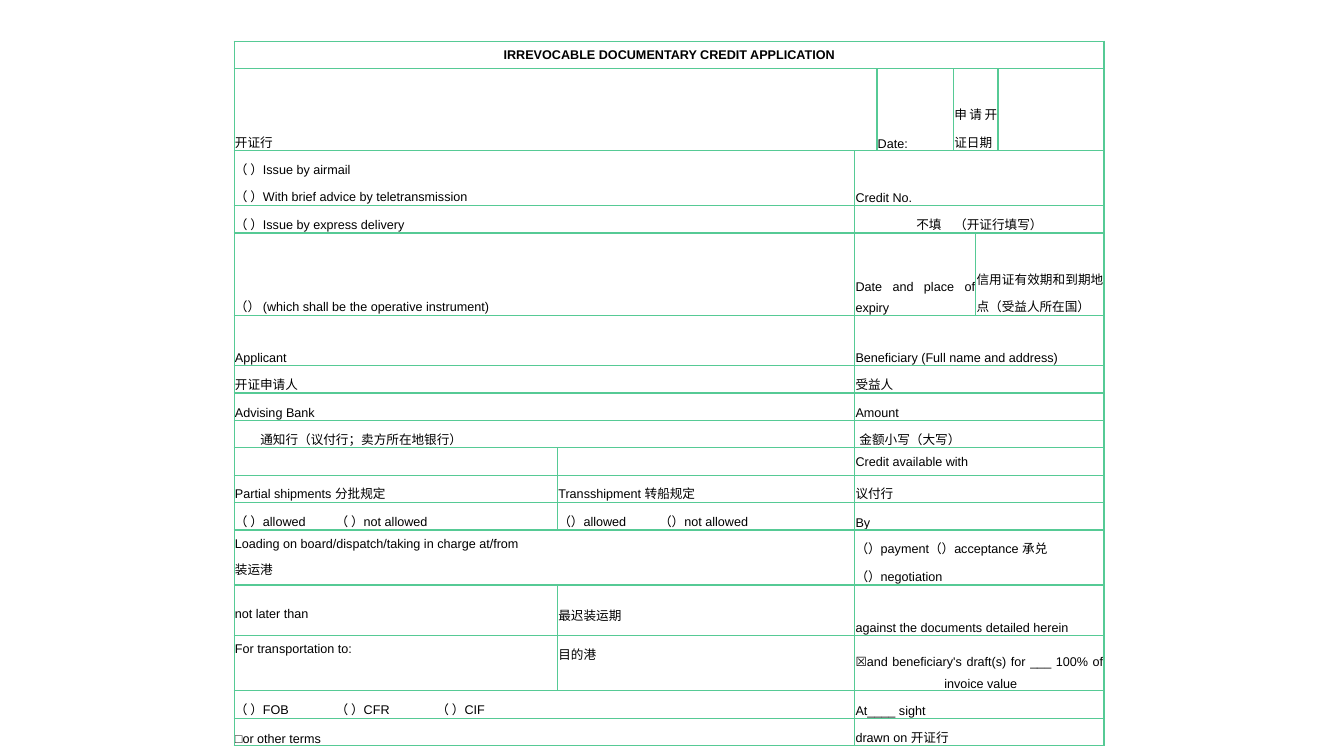
from dataclasses import dataclass

from lxml import etree
from pptx import Presentation
from pptx.dml.color import RGBColor
from pptx.enum.text import MSO_ANCHOR, PP_ALIGN
from pptx.oxml.ns import qn
from pptx.util import Cm, Pt

TOP, MIDDLE, BOTTOM = MSO_ANCHOR.TOP, MSO_ANCHOR.MIDDLE, MSO_ANCHOR.BOTTOM
LEFT, CENTER, JUSTIFY = PP_ALIGN.LEFT, PP_ALIGN.CENTER, PP_ALIGN.JUSTIFY


@dataclass(frozen=True)
class Theme:
    """Colours, font and sizes of the form."""
    font: str = "Arial"
    size: float = 9
    text: str = "000000"
    border: str = "56CA95"
    border_pt: float = 1
    line_spacing: float = 1.5


THEME = Theme()
COLS = [8.15, 7.49, 0.56, 1.93, 0.56, 0.56, 2.67]
ROWS = [0.69, 2.07, 1.38, 0.69, 2.07, 1.27] + [0.69] * 6 + [1.38, 1.27, 1.4, 0.69, 0.69]


@dataclass(frozen=True)
class Entry:
    """One form field: first column, column span, text and its layout."""
    col: int
    span: int
    text: str
    anchor: MSO_ANCHOR = BOTTOM
    align: PP_ALIGN = JUSTIFY
    margin: float = 0
    indent: float = 0
    tabs: tuple = ()


def left(text, **layout):
    """Return a field over the two left columns."""
    return Entry(0, 2, text, **layout)


def right(text, **layout):
    """Return a field over the five right columns."""
    return Entry(2, 5, text, **layout)


FIELDS = [
    [Entry(0, 7, "IRREVOCABLE DOCUMENTARY CREDIT APPLICATION", TOP, CENTER)],
    [Entry(0, 3, "开证行"), Entry(3, 1, "Date:"), Entry(4, 2, "申请开证日期")],
    [left("（ ）Issue by airmail\n（ ）With brief advice by teletransmission"),
     right("Credit No.")],
    [left("（ ）Issue by express delivery"), right("不填　（开证行填写）", align=CENTER)],
    [left("（） (which shall be the operative instrument)"),
     Entry(2, 3, "Date and place of expiry"),
     Entry(5, 2, "信用证有效期和到期地点（受益人所在国）")],
    [left("Applicant"), right("Beneficiary (Full name and address)")],
    [left("开证申请人", anchor=TOP), right("受益人", anchor=TOP)],
    [left("Advising Bank"), right("Amount")],
    [left("通知行（议付行；卖方所在地银行）", anchor=MIDDLE, margin=0.64),
     right("金额小写（大写）", anchor=MIDDLE, margin=0.1)],
    [right("Credit available with", anchor=TOP, align=LEFT)],
    [Entry(0, 1, "Partial shipments 分批规定", MIDDLE),
     Entry(1, 1, "Transshipment 转船规定", MIDDLE), right("议付行", anchor=MIDDLE)],
    [Entry(0, 1, "（ ）allowed\t（ ）not allowed", align=LEFT, tabs=(2.35,)),
     Entry(1, 1, "（）allowed\t（）not allowed", align=LEFT, tabs=(2.4,)), right("By")],
    [left("Loading on board/dispatch/taking in charge at/from\n装运港",
          anchor=TOP, align=LEFT),
     right("（）payment（）acceptance 承兑\n（）negotiation")],
    [Entry(0, 1, "not later than", MIDDLE), Entry(1, 1, "最迟装运期", MIDDLE),
     right("against the documents detailed herein")],
    [Entry(0, 1, "For transportation to:", TOP, LEFT), Entry(1, 1, "目的港", TOP, LEFT),
     right("☒and beneficiary's draft(s) for ___ 100% of invoice value",
           margin=2.24, indent=-2.24)],
    [left("（ ）FOB\t（ ）CFR\t（ ）CIF", align=LEFT, tabs=(2.7, 4.84)),
     right("At____ sight")],
    [left("□or other terms"), right("drawn on 开证行")],
]


def style_cell(cell):
    """Clear the fill, remove the margins and draw the four borders."""
    cell.fill.background()
    cell.margin_left = cell.margin_right = Cm(0.02)
    cell.margin_top = cell.margin_bottom = 0
    cell.text_frame.paragraphs[0]._p.get_or_add_endParaRPr().set("sz", str(THEME.size * 100))
    tcPr = cell._tc.get_or_add_tcPr()
    for i, side in enumerate(("lnL", "lnR", "lnT", "lnB")):
        ln = etree.Element(qn("a:" + side), w=str(Pt(THEME.border_pt)))
        fill = etree.SubElement(ln, qn("a:solidFill"))
        etree.SubElement(fill, qn("a:srgbClr"), val=THEME.border)
        tcPr.insert(i, ln)


def write_field(cell, entry, bold):
    """Write a field's paragraphs into its cell."""
    tf = cell.text_frame
    tf.text = entry.text
    cell.vertical_anchor = entry.anchor
    for p in tf.paragraphs:
        p.alignment = entry.align
        p.line_spacing = THEME.line_spacing
        pPr = p._p.get_or_add_pPr()
        pPr.set("marL", str(Cm(entry.margin)))
        pPr.set("indent", str(Cm(entry.indent)))
        if entry.tabs:
            tab_list = etree.SubElement(pPr, qn("a:tabLst"))
            for pos in entry.tabs:
                etree.SubElement(tab_list, qn("a:tab"), pos=str(Cm(pos)), algn="l")
        for r in p.runs:
            r.font.name = THEME.font
            r.font.size = Pt(THEME.size)
            r.font.bold = bold
            r.font.color.rgb = RGBColor.from_string(THEME.text)


def add_form(slide, x, y, w, h):
    """Place the credit application table in the given box."""
    table = slide.shapes.add_table(len(ROWS), len(COLS), x, y, w, h).table
    table.first_row = table.horz_banding = False
    for column, share in zip(table.columns, COLS):
        column.width = int(w * share / sum(COLS))
    for row, share in zip(table.rows, ROWS):
        row.height = int(h * share / sum(ROWS))
    for cell in table.iter_cells():
        style_cell(cell)
    for i, entries in enumerate(FIELDS):
        for entry in entries:
            cell = table.cell(i, entry.col)
            if entry.span > 1:
                cell.merge(table.cell(i, entry.col + entry.span - 1))
            write_field(cell, entry, bold=i == 0)


def main():
    """Build the slide and save it."""
    prs = Presentation()
    prs.slide_width, prs.slide_height = Cm(33.87), Cm(19.05)
    slide = prs.slides.add_slide(prs.slide_layouts[6])
    add_form(slide, Cm(5.9), Cm(1.04), Cm(21.92), Cm(17.74))
    prs.save("out.pptx")


if __name__ == "__main__":
    main()
